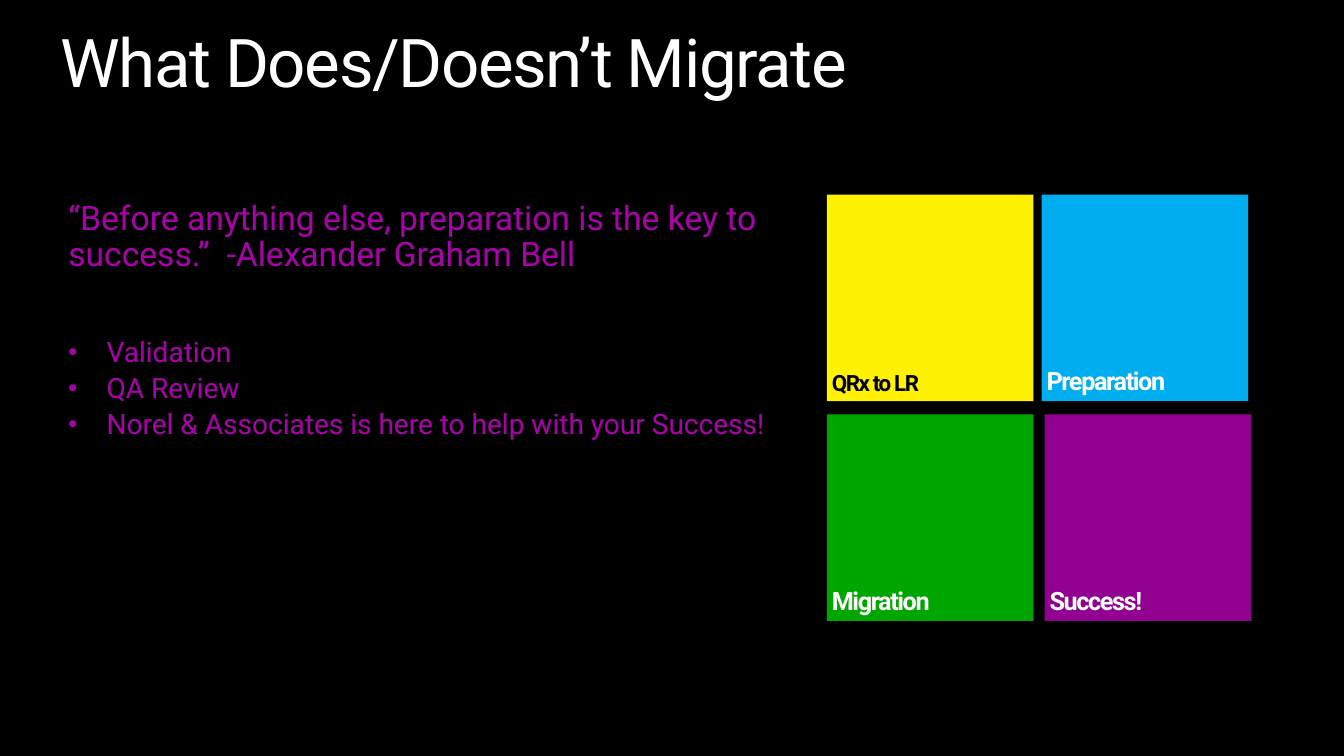
from pptx import Presentation
from pptx.dml.color import RGBColor
from pptx.enum.shapes import MSO_SHAPE
from pptx.enum.text import MSO_ANCHOR, PP_ALIGN
from pptx.oxml.ns import qn
from pptx.util import Inches, Pt
from lxml import etree

RECT = MSO_SHAPE.RECTANGLE
TOP, BOTTOM = MSO_ANCHOR.TOP, MSO_ANCHOR.BOTTOM
LEFT = PP_ALIGN.LEFT

BLACK = RGBColor(0x00, 0x00, 0x00)
WHITE = RGBColor(0xFF, 0xFF, 0xFF)
PINK = RGBColor(0xAC, 0x00, 0xAC)
PURPLE = RGBColor(0x91, 0x00, 0x91)
YELLOW = RGBColor(0xFF, 0xF2, 0x00)
GREEN = RGBColor(0x00, 0xA6, 0x00)
BLUE = RGBColor(0x00, 0xAE, 0xEF)


def set_frame(frame, side, edge, anchor):
    form = {"word_wrap": True, "vertical_anchor": anchor,
            "margin_left": Inches(side), "margin_right": Inches(side),
            "margin_top": Inches(edge), "margin_bottom": Inches(edge)}
    for name, value in form.items():
        setattr(frame, name, value)


def write(para, text, size, color, bold=False, tight=False):
    para.line_spacing = 0.9
    para.alignment = LEFT
    run = para.add_run()
    run.text = text
    form = {"name": "Roboto", "size": Pt(size), "bold": bold}
    for name, value in form.items():
        setattr(run.font, name, value)
    run.font.color.rgb = color
    if tight:
        run.font._element.set("spc", "-100")


deck = Presentation()
deck.slide_width, deck.slide_height = Inches(13.33), Inches(7.5)
slide = deck.slides.add_slide(deck.slide_layouts[6])
slide.background.fill.solid()
slide.background.fill.fore_color.rgb = BLACK

# Title
title = slide.shapes.add_textbox(
    Inches(0.5), Inches(0.22), Inches(12.75), Inches(0.87)).text_frame
set_frame(title, 0.1, 0.07, TOP)
write(title.paragraphs[0], "What Does/Doesn’t Migrate", 48, WHITE, tight=True)

# Quote
body = slide.shapes.add_textbox(
    Inches(0.58), Inches(1.93), Inches(7.5), Inches(4.23)).text_frame
set_frame(body, 0.1, 0.07, TOP)
quote = ("“Before anything else, preparation is the key to success.”"
         "  -Alexander Graham Bell")
write(body.paragraphs[0], quote, 24, PINK)

# Bullets, the first one set well below the quote
points = [("Validation", 46), ("QA Review", 4),
          ("Norel & Associates is here to help with your Success!", 4)]
for text, gap in points:
    para = body.add_paragraph()
    write(para, text, 20, PINK)
    para.space_before = Pt(gap)
    props = para._p.get_or_add_pPr()
    props.set("marL", str(Inches(0.38)))
    props.set("indent", str(-Inches(0.38)))
    etree.SubElement(props, qn("a:buSzPct")).set("val", "90000")
    etree.SubElement(props, qn("a:buFont")).set("typeface", "Arial")
    etree.SubElement(props, qn("a:buChar")).set("char", "•")

# Tiles
UPPER, LOWER = 1.93, 4.11
tiles = [("Success!", 10.36, LOWER, PURPLE, WHITE, 18),
         ("QRx to LR", 8.2, UPPER, YELLOW, BLACK, 16),
         ("Migration", 8.2, LOWER, GREEN, WHITE, 18),
         ("Preparation", 10.33, UPPER, BLUE, WHITE, 18)]
for text, left, top, fill, color, size in tiles:
    tile = slide.shapes.add_shape(
        RECT, Inches(left), Inches(top), Inches(2.05), Inches(2.05))
    tile.shadow.inherit = False
    tile.fill.solid()
    tile.fill.fore_color.rgb = fill
    tile.line.fill.background()
    set_frame(tile.text_frame, 0.05, 0.05, BOTTOM)
    write(tile.text_frame.paragraphs[0], text, size, color, True, True)

deck.save("out.pptx")
